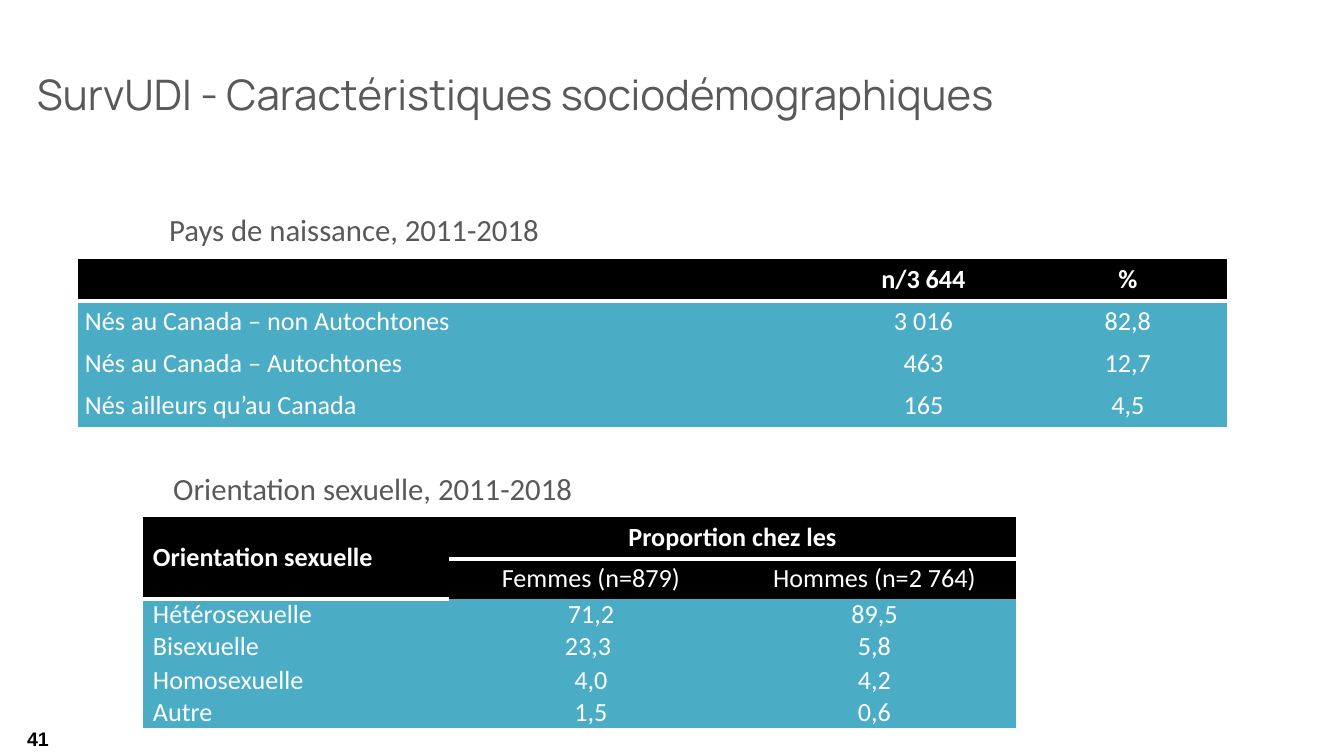
from lxml import etree
from pptx import Presentation
from pptx import util as u
from pptx.dml.color import RGBColor
from pptx.enum import text
from pptx.oxml import ns

PX = 914400 * 10 / 1344
BLACK, WHITE, GREY, TEAL = "000000", "FFFFFF", "595959", "4BACC6"
LEFT, CENTER, RIGHT = text.PP_ALIGN.LEFT, text.PP_ALIGN.CENTER, text.PP_ALIGN.RIGHT
MIDDLE, TOP, BOTTOM = text.MSO_ANCHOR.MIDDLE, text.MSO_ANCHOR.TOP, text.MSO_ANCHOR.BOTTOM
NO_STYLE = "{2D5ABB26-0587-4C30-8999-92F81FD0307C}"

BIRTHPLACE = [
    ["", "n/3 644", "%"],
    ["Nés au Canada – non Autochtones", "3 016", "82,8"],
    ["Nés au Canada – Autochtones", "463", "12,7"],
    ["Nés ailleurs qu’au Canada", "165", "4,5"],
]
ORIENTATION = [
    ["Orientation sexuelle", "Proportion chez les", ""],
    ["", "Femmes (n=879)", "Hommes (n=2 764)"],
    ["Hétérosexuelle", "71,2", "89,5"],
    ["Bisexuelle", "23,3 ", "5,8"],
    ["Homosexuelle", "4,0", "4,2"],
    ["Autre", "1,5", "0,6"],
]


def px(length):
    """Turn pixels into EMU."""
    return u.Emu(round(length * PX))


def color(value):
    """Turn a hex string into a colour."""
    return RGBColor.from_string(value)


def set_all(target, values):
    """Set attributes from a dict of format values."""
    for name, value in values.items():
        setattr(target, name, value)


def write(frame, words, align, ink, **font):
    """Write one formatted paragraph into a text frame."""
    para = frame.paragraphs[0]
    para.alignment = align
    span = para.add_run()
    span.text = words
    set_all(span.font, font)
    span.font.color.rgb = color(ink)


def add_text(page, place, words, ink, align=LEFT, layout=None, **font):
    """Add a text box at a place given in pixels."""
    box = page.shapes.add_textbox(*map(px, place))
    set_all(box.text_frame, {"word_wrap": True, "vertical_anchor": MIDDLE, **(layout or {})})
    write(box.text_frame, words, align, ink, **font)


def underline(cell):
    """Give a cell a white bottom border."""
    props = cell._tc.get_or_add_tcPr()
    line = etree.Element(ns.qn("a:lnB"), w=str(u.Pt(2)))
    fill = etree.SubElement(line, ns.qn("a:solidFill"))
    etree.SubElement(fill, ns.qn("a:srgbClr"), val=WHITE)
    props.insert(0, line)


def add_grid(page, left, top, widths, heights, rows, heads, side, pad, anchor):
    """Add a table with black heading rows and teal body rows."""
    place = map(px, (left, top, sum(widths), sum(heights)))
    table = page.shapes.add_table(len(rows), len(widths), *place).table
    set_all(table, {"first_row": False, "horz_banding": False})
    table._tbl.tblPr.find(ns.qn("a:tableStyleId")).text = NO_STYLE
    for column, width in zip(table.columns, widths):
        column.width = px(width)
    for r, (row, height) in enumerate(zip(rows, heights)):
        table.rows[r].height = px(height)
        head = r < heads
        edge = px(0 if head else pad)
        for c, words in enumerate(row):
            cell = table.cell(r, c)
            set_all(cell, {
                "margin_left": px(side), "margin_right": px(side),
                "margin_top": edge, "margin_bottom": edge,
                "vertical_anchor": MIDDLE if head else anchor,
            })
            cell.fill.solid()
            cell.fill.fore_color.rgb = color(BLACK if head else TEAL)
            write(cell.text_frame, words, CENTER if c else LEFT, WHITE,
                  name="Calibri", size=u.Pt(14), bold=r == 0)
    for cell in table.rows[0].cells:
        underline(cell)
    return table


def main():
    """Build the slide and save it."""
    deck = Presentation()
    set_all(deck, {"slide_width": px(1344), "slide_height": px(756)})
    page = deck.slides.add_slide(deck.slide_layouts[6])

    add_text(page, (0, 719, 62, 40), "41", BLACK, RIGHT,
             name="Arial", size=u.Pt(10.5), bold=True)
    add_text(page, (27, 31, 1207, 126), "SurvUDI - Caractéristiques sociodémographiques", GREY,
             layout={"margin_left": px(10), "margin_right": px(10)},
             name="Manrope", size=u.Pt(22.5))
    captions = [
        ((156, 204, 402, 51), "Pays de naissance, 2011-2018"),
        ((160, 463, 431, 51), "Orientation sexuelle, 2011-2018"),
    ]
    for place, words in captions:
        add_text(page, place, words, GREY,
                 layout={"word_wrap": False, "vertical_anchor": TOP},
                 name="Calibri", size=u.Pt(16.5))

    add_grid(page, 78, 259, [740, 211, 198], [42] * 4, BIRTHPLACE, 1, 7, 5, MIDDLE)
    table = add_grid(page, 143, 517, [306, 284, 283], [42, 40, 31, 31, 35, 31],
                     ORIENTATION, 2, 10, 0, BOTTOM)
    underline(table.cell(1, 0))
    table.cell(0, 0).merge(table.cell(1, 0))
    table.cell(0, 1).merge(table.cell(0, 2))
    deck.save("out.pptx")


if __name__ == "__main__":
    main()
